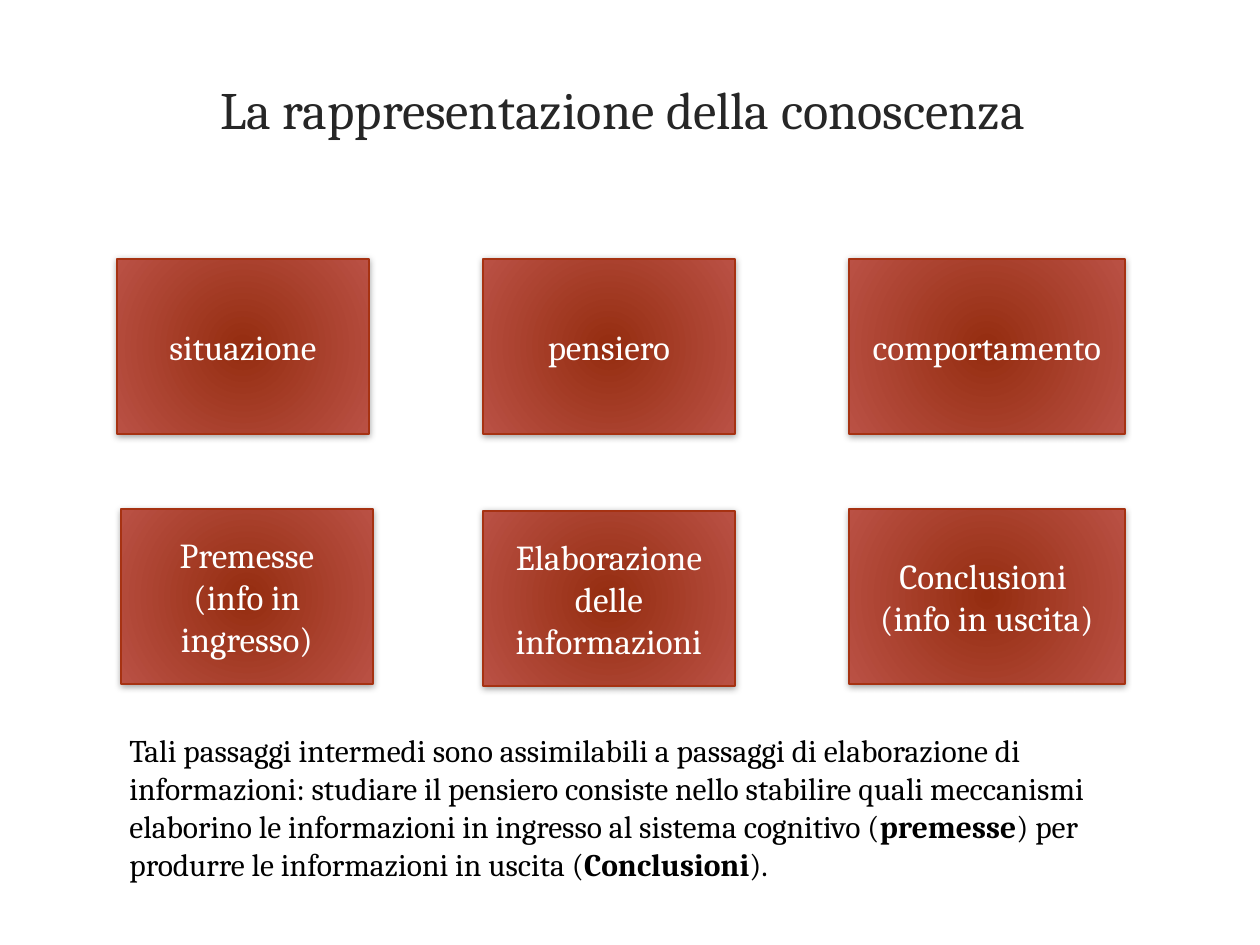
from dataclasses import dataclass

import pptx
import pptx.dml.color
import pptx.enum.shapes
import pptx.enum.text
import pptx.oxml
import pptx.oxml.ns
import pptx.util

PX = 914400 // 126
ALIGN = pptx.enum.text.PP_ALIGN
ANCHOR = pptx.enum.text.MSO_ANCHOR
FIT = pptx.enum.text.MSO_AUTO_SIZE
NS = pptx.oxml.ns.nsdecls("a")

RADIAL = (f'<a:path {NS} path="circle">'
          '<a:fillToRect l="40000" t="100000" r="40000" b="100000"/></a:path>')
SHADOW = (f'<a:effectLst {NS}><a:outerShdw blurRad="50800" dist="12700" dir="5400000" '
          'rotWithShape="0"><a:srgbClr val="000000"><a:alpha val="37000"/></a:srgbClr>'
          '</a:outerShdw></a:effectLst>')


@dataclass(frozen=True)
class Theme:
    font: str = "Cambria"
    title: str = "262626"
    body: str = "000000"
    card_text: str = "FFFFFF"
    card_inner: str = "952D10"
    card_outer: str = "BA5145"
    card_line: str = "A63212"
    title_size: int = 30
    card_size: int = 20
    body_size: int = 18


def rgb(value):
    return pptx.dml.color.RGBColor.from_string(value)


def set_values(target, values):
    for name, value in values.items():
        setattr(target, name, value)


class Painter:
    """Holds the theme and the current slide."""

    def __init__(self, deck, theme):
        self.theme = theme
        self.page = deck.slides.add_slide(deck.slide_layouts.get_by_name("Title Only"))

    def add_text(self, box, paragraphs, size, color, align, **frame_format):
        """Fill a box with paragraphs, each a list of (text, bold) spans."""
        frame = box.text_frame
        set_values(frame, {"word_wrap": True, **frame_format})
        for index, spans in enumerate(paragraphs):
            para = frame.add_paragraph() if index else frame.paragraphs[0]
            para.alignment = align
            for text, bold in spans:
                span = para.add_run()
                span.text = text
                set_values(span.font, {"name": self.theme.font, "bold": bold,
                                       "size": pptx.util.Pt(size)})
                span.font.color.rgb = rgb(color)

    def title(self, text, *place):
        box = self.page.shapes.title
        set_values(box, dict(zip(("left", "top", "width", "height"),
                                 (length * PX for length in place))))
        self.add_text(box, [[(text, False)]], self.theme.title_size, self.theme.title,
                      ALIGN.CENTER, vertical_anchor=ANCHOR.MIDDLE, auto_size=FIT.NONE)

    def card(self, lines, *place):
        card = self.page.shapes.add_shape(pptx.enum.shapes.MSO_SHAPE.RECTANGLE,
                                          *(length * PX for length in place))
        card.fill.gradient()
        colors = (self.theme.card_inner, self.theme.card_outer)
        for position, (stop, color) in enumerate(zip(card.fill.gradient_stops, colors)):
            stop.position = position
            stop.color.rgb = rgb(color)
        gradient = card._element.spPr.find(pptx.oxml.ns.qn("a:gradFill"))
        linear = gradient.find(pptx.oxml.ns.qn("a:lin"))
        gradient.replace(linear, pptx.oxml.parse_xml(RADIAL))
        card.line.color.rgb = rgb(self.theme.card_line)
        card.line.width = pptx.util.Pt(0.75)
        card._element.spPr.append(pptx.oxml.parse_xml(SHADOW))
        self.add_text(card, [[(line, False)] for line in lines], self.theme.card_size,
                      self.theme.card_text, ALIGN.CENTER, vertical_anchor=ANCHOR.MIDDLE)

    def note(self, spans, *place):
        box = self.page.shapes.add_textbox(*(length * PX for length in place))
        self.add_text(box, [spans], self.theme.body_size, self.theme.body, ALIGN.LEFT,
                      auto_size=FIT.SHAPE_TO_FIT_TEXT)


def main():
    deck = pptx.Presentation()
    deck.slide_width, deck.slide_height = 1260 * PX, 945 * PX
    painter = Painter(deck, Theme())
    painter.title("La rappresentazione della conoscenza\t", 76, 9, 1108, 199)

    cards = [
        (["situazione"], 117, 259, 252),
        (["pensiero"], 483, 259, 252),
        (["comportamento"], 849, 259, 276),
        (["Premesse", "(info in ingresso)"], 121, 509, 252),
        (["Elaborazione delle informazioni"], 483, 511, 252),
        (["Conclusioni ", "(info in uscita)"], 849, 509, 276),
    ]
    for lines, left, top, width in cards:
        painter.card(lines, left, top, width, 175)

    painter.note([
        ("Tali passaggi intermedi sono assimilabili a passaggi di elaborazione di "
         "informazioni: studiare il pensiero consiste nello stabilire quali meccanismi "
         "elaborino le informazioni in ingresso al sistema cognitivo (", False),
        ("premesse", True),
        (") per produrre le informazioni in uscita (", False),
        ("Conclusioni", True),
        (").", False),
    ], 117, 725, 1085, 165)
    deck.save("out.pptx")


if __name__ == "__main__":
    main()
